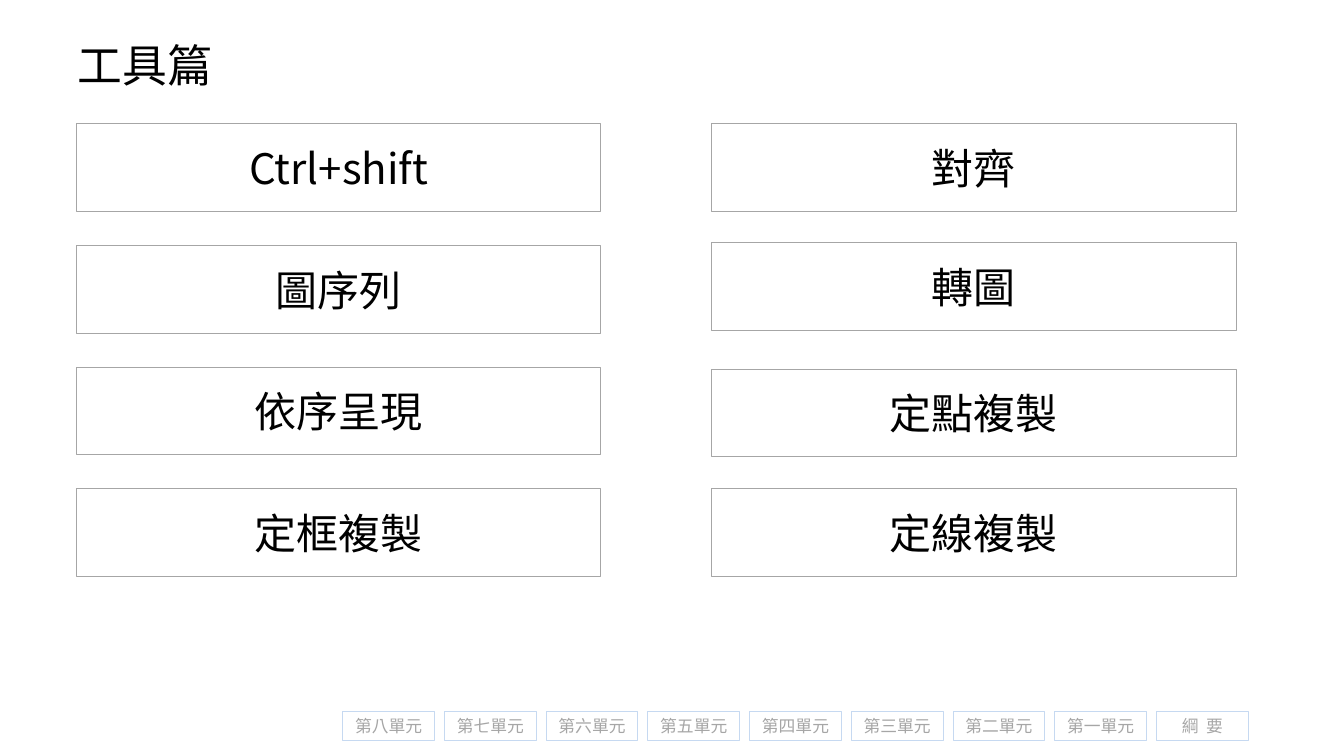
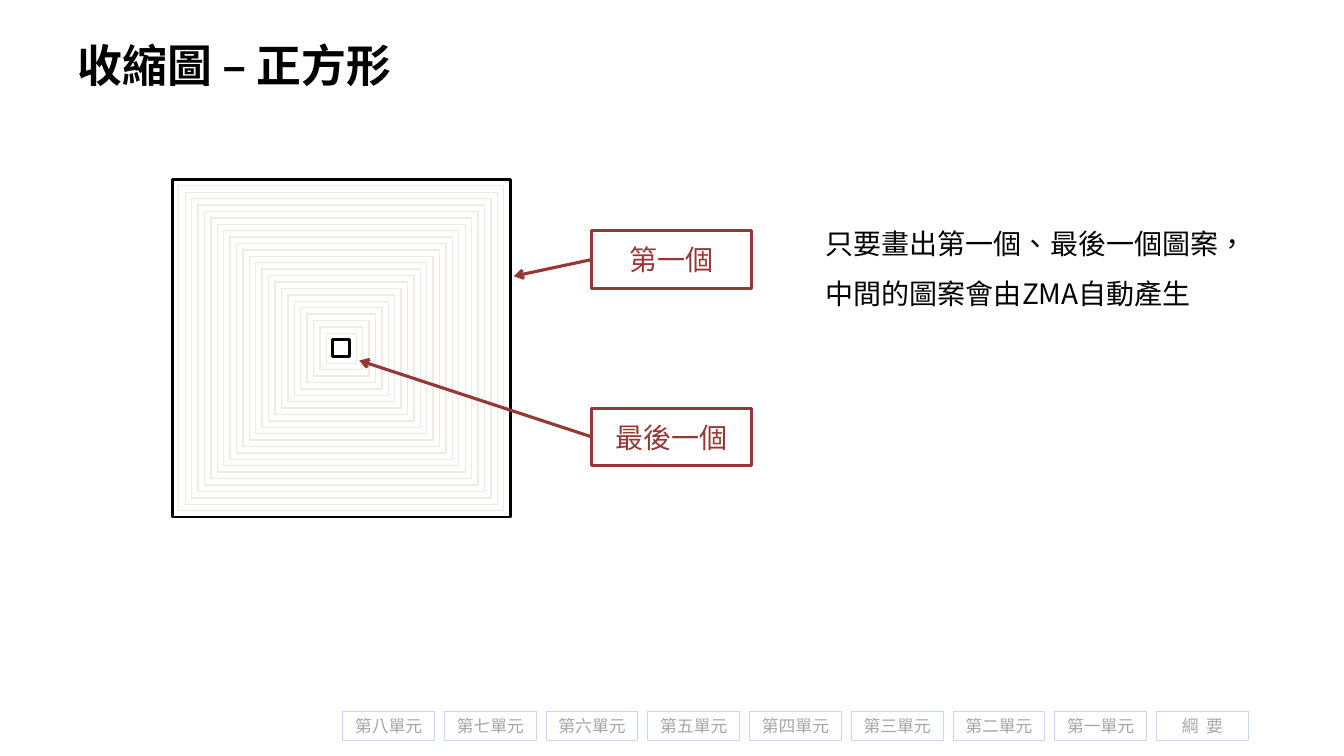
from dataclasses import dataclass

from lxml.etree import SubElement
from pptx import Presentation
from pptx.dml.color import RGBColor
from pptx.enum.shapes import MSO_SHAPE
from pptx.enum.text import MSO_ANCHOR, MSO_AUTO_SIZE, PP_ALIGN
from pptx.oxml.ns import qn
from pptx.util import Inches, Pt


@dataclass(frozen=True)
class Theme:
    font: str = "Noto Sans CJK SC"
    ink: str = "000000"
    muted: str = "A6A6A6"
    nav_line: str = "C6D9F1"
    pale: str = "EEECE1"
    accent: str = "953735"
    paper: str = "FFFFFF"
    title_size: int = 32
    tool_size: int = 30
    body_size: int = 20
    nav_size: int = 12
    hairline: float = 0.75
    thin: float = 1
    bold: float = 2
    callout: float = 2.25


THEME = Theme()
SLIDE_WIDTH, SLIDE_HEIGHT = 13.33, 7.5

UNITS = ["綱 要", "第一單元", "第二單元", "第三單元", "第四單元",
         "第五單元", "第六單元", "第七單元", "第八單元"]
NAV_LEFT, NAV_RIGHT, NAV_TOP = 3.4, 12.38, 7.06
NAV_WIDTH, NAV_HEIGHT = 0.91, 0.29

# Each tool column: left edge, tool names, small vertical shift of each row.
TOOL_COLUMNS = [
    (0.76, ["Ctrl+shift", "圖序列", "依序呈現", "定框複製"], [0, 0, 0, 0]),
    (7.06, ["對齊", "轉圖", "定點複製", "定線複製"], [0, -0.03, 0.02, 0]),
]
TOOL_TOP, TOOL_PITCH, TOOL_WIDTH, TOOL_HEIGHT = 1.23, 1.207, 5.2, 0.87

SQUARE_LEFT, SQUARE_TOP = 1.71, 1.78
OUTER_SIDE, INNER_SIDE, SQUARE_STEPS = 3.35, 0.17, 25

CALLOUT_LEFT, CALLOUT_WIDTH, CALLOUT_HEIGHT = 5.87, 1.58, 0.57
# Each callout: label, top, pointer as start y, start x, end y, end x.
CALLOUTS = [
    ("最後一個", 4.05, (0.5, 0, -0.83, -1.46)),
    ("第一個", 2.29, (0.5, 0, 0.79, -0.49)),
]


def color(value):
    return RGBColor.from_string(value)


def format_text(frame, size, ink, align=PP_ALIGN.CENTER, bold=False):
    for paragraph in frame.paragraphs:
        paragraph.alignment = align
        for run in paragraph.runs:
            run.font.name = THEME.font
            run.font.size = Pt(size)
            run.font.bold = bold
            run.font.color.rgb = color(ink)
            properties = run.font._element
            properties.set("lang", "zh-TW")
            SubElement(properties, qn("a:ea"), typeface=THEME.font)


def add_box(shapes, bounds, line, weight, kind=MSO_SHAPE.RECTANGLE):
    """Add an unfilled outline; bounds are left, top, width, height in inches."""
    box = shapes.add_shape(kind, *map(Inches, bounds))
    box.shadow.inherit = False
    box.fill.background()
    box.line.color.rgb = color(line)
    box.line.width = Pt(weight)
    return box


def add_label(shapes, text, bounds, line, size, ink):
    label = add_box(shapes, bounds, line, THEME.hairline)
    frame = label.text_frame
    frame.text = text
    frame.word_wrap = False
    frame.vertical_anchor = MSO_ANCHOR.MIDDLE
    format_text(frame, size, ink)
    return label


def add_callout(shapes, text, top, pointer):
    bounds = (CALLOUT_LEFT, top, CALLOUT_WIDTH, CALLOUT_HEIGHT)
    callout = add_box(shapes, bounds, THEME.accent, THEME.callout,
                      MSO_SHAPE.LINE_CALLOUT_1)
    callout.fill.solid()
    callout.fill.fore_color.rgb = color(THEME.paper)
    for index, share in enumerate(pointer):
        callout.adjustments[index] = share
    SubElement(callout.line._get_or_add_ln(), qn("a:tailEnd"), type="arrow")
    frame = callout.text_frame
    frame.text = text
    frame.word_wrap = True
    frame.vertical_anchor = MSO_ANCHOR.MIDDLE
    format_text(frame, THEME.body_size, THEME.accent)


def add_title_slide(deck, layout, text, bold=False):
    slide = deck.slides.add_slide(layout)
    title = slide.shapes.title
    title.left, title.top = Inches(0.67), Inches(0.3)
    title.width, title.height = Inches(12), Inches(0.69)
    frame = title.text_frame
    frame.text = text
    frame.auto_size = MSO_AUTO_SIZE.NONE
    frame.vertical_anchor = MSO_ANCHOR.MIDDLE
    format_text(frame, THEME.title_size, THEME.ink, PP_ALIGN.LEFT, bold)
    return slide


def add_navigation(slide):
    """Draw the unit row and move it to the layout that all slides share."""
    layout = slide.slide_layout
    for placeholder in list(layout.placeholders)[1:]:
        layout.placeholders.element.remove(placeholder.element)
    pitch = (NAV_RIGHT - NAV_WIDTH - NAV_LEFT) / (len(UNITS) - 1)
    buttons = []
    for index, unit in enumerate(UNITS):
        left = NAV_RIGHT - NAV_WIDTH - index * pitch
        buttons.append(add_label(
            slide.shapes, unit, (left, NAV_TOP, NAV_WIDTH, NAV_HEIGHT),
            THEME.nav_line, THEME.nav_size, THEME.muted))
    outline_run = buttons[0].text_frame.paragraphs[0].runs[0]
    outline_run.font._element.set("spc", "130")
    for button in buttons:
        layout.shapes.element.insert_element_before(button.element, "p:extLst")


def add_tools(shapes):
    for left, tools, shifts in TOOL_COLUMNS:
        for row, (tool, shift) in enumerate(zip(tools, shifts)):
            top = TOOL_TOP + row * TOOL_PITCH + shift
            add_label(shapes, tool, (left, top, TOOL_WIDTH, TOOL_HEIGHT),
                      THEME.muted, THEME.tool_size, THEME.ink)


def add_square(shapes, step, line, weight):
    """Add one square of the series, where step 0 is the outermost."""
    inset = step * (OUTER_SIDE - INNER_SIDE) / SQUARE_STEPS / 2
    side = OUTER_SIDE - 2 * inset
    add_box(shapes, (SQUARE_LEFT + inset, SQUARE_TOP + inset, side, side),
            line, weight)


def add_shrinking_squares(shapes):
    add_square(shapes, 0, THEME.ink, THEME.bold)
    between = shapes.add_group_shape().shapes
    for step in range(1, SQUARE_STEPS):
        add_square(between, step, THEME.pale, THEME.thin)
    add_square(shapes, SQUARE_STEPS, THEME.ink, THEME.bold)


def add_explanation(shapes, text):
    explanation = shapes.add_textbox(*map(Inches, (8.09, 2.03, 4.41, 1.05)))
    frame = explanation.text_frame
    frame.text = text
    frame.word_wrap = False
    frame.auto_size = MSO_AUTO_SIZE.SHAPE_TO_FIT_TEXT
    frame.paragraphs[0].line_spacing = 1.5
    format_text(frame, THEME.body_size, THEME.ink, PP_ALIGN.LEFT)


def main():
    deck = Presentation()
    deck.slide_width, deck.slide_height = Inches(SLIDE_WIDTH), Inches(SLIDE_HEIGHT)
    title_only = deck.slide_layouts[5]

    tools = add_title_slide(deck, title_only, "工具篇")
    add_navigation(tools)
    add_tools(tools.shapes)

    squares = add_title_slide(deck, title_only, "收縮圖 – 正方形", bold=True)
    add_shrinking_squares(squares.shapes)
    for label, top, pointer in CALLOUTS:
        add_callout(squares.shapes, label, top, pointer)
    add_explanation(squares.shapes,
                    "只要畫出第一個、最後一個圖案，\v中間的圖案會由ZMA自動產生")

    deck.save("out.pptx")


if __name__ == "__main__":
    main()
